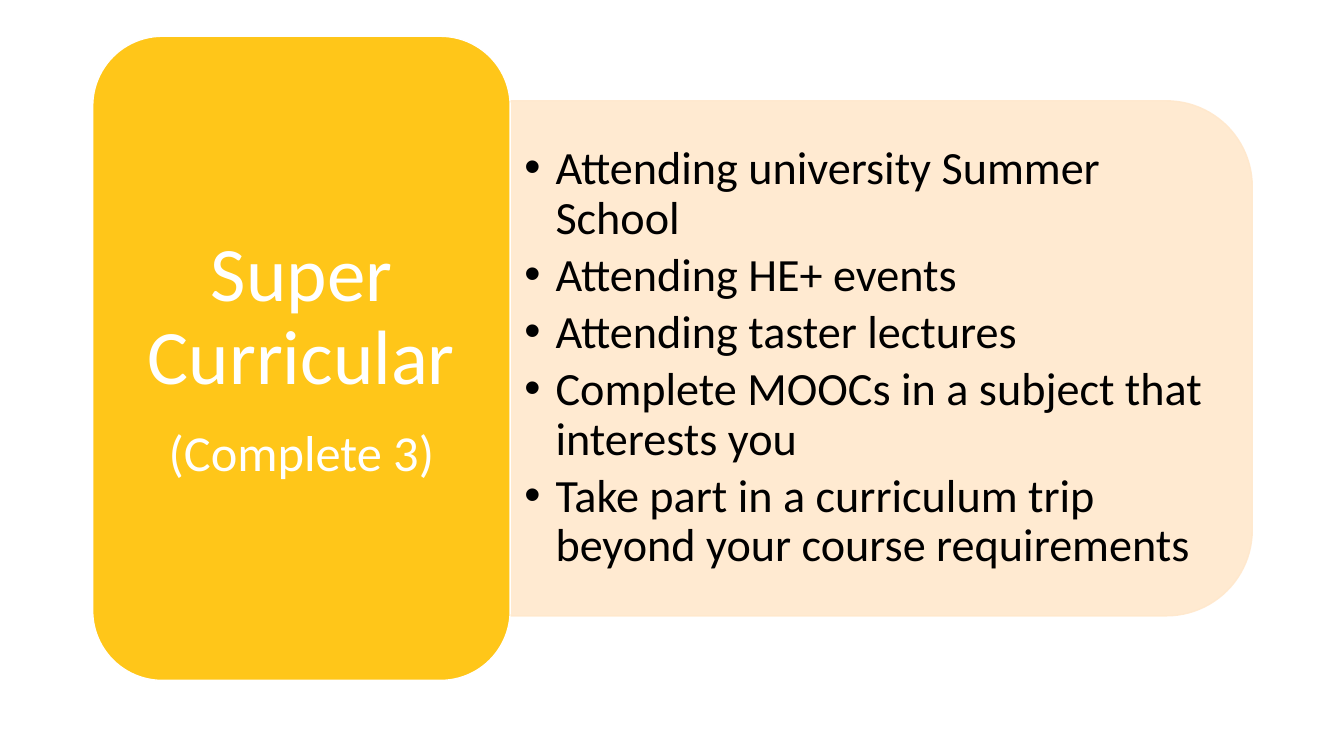
from dataclasses import dataclass
from lxml import etree
from pptx import Presentation
from pptx.dml.color import RGBColor
from pptx.enum.shapes import MSO_SHAPE
from pptx.enum.text import MSO_ANCHOR, MSO_AUTO_SIZE, PP_ALIGN
from pptx.oxml.ns import qn
from pptx.util import Inches, Pt

ROUND = MSO_SHAPE.ROUNDED_RECTANGLE
TAB = MSO_SHAPE.ROUND_2_SAME_RECTANGLE
MIDDLE = MSO_ANCHOR.MIDDLE
FIXED = MSO_AUTO_SIZE.NONE
LEFT, CENTER = PP_ALIGN.LEFT, PP_ALIGN.CENTER


@dataclass(frozen=True)
class Theme:
    font: str = "Calibri"
    gold: str = "FFC000"
    cream: str = "FFE8CC"
    white: str = "FFFFFF"
    black: str = "000000"
    head: int = 55
    sub: int = 36
    body: int = 33
    alpha: int = 90


THEME = Theme()

CARD = (0.92, 0.36, 4.14, 6.39)
PANEL = (5.06, 1.0, 7.36, 5.11)
HEAD = [("Super Curricular", THEME.head), ("(Complete 3)", THEME.sub)]
TASKS = [
    "Attending university Summer School",
    "Attending HE+ events",
    "Attending taster lectures",
    "Complete MOOCs in a subject that interests you",
    "Take part in a curriculum trip beyond your course requirements",
]


def apply(item, form):
    for name, value in form.items():
        setattr(item, name, value)


def place(item, box):
    names = ("left", "top", "width", "height")
    apply(item, dict(zip(names, map(Inches, box))))


def fade(fill):
    tint = fill._xPr.find(qn("a:solidFill"))[0]
    etree.SubElement(tint, qn("a:alpha"), val=str(THEME.alpha * 1000))


def add_form(slide, kind, box, color, edge):
    form = slide.shapes.add_shape(kind, *map(Inches, box))
    form.shadow.inherit = False
    for fill, tone in ((form.fill, color), (form.line.fill, edge)):
        fill.solid()
        fill.fore_color.rgb = RGBColor.from_string(tone)
    form.line.width = Pt(1)
    fade(form.fill)
    return form


def set_frame(frame, side, end):
    apply(frame, {
        "word_wrap": True, "auto_size": FIXED, "vertical_anchor": MIDDLE,
        "margin_left": Inches(side), "margin_right": Inches(side),
        "margin_top": Inches(end), "margin_bottom": Inches(end),
    })


def write(frame, lines, color, align, gap):
    for i, (text, size) in enumerate(lines):
        para = frame.add_paragraph() if i else frame.paragraphs[0]
        apply(para, {"alignment": align, "line_spacing": 0.9,
                     "space_after": Pt(gap)})
        run = para.add_run()
        run.text = text
        apply(run.font, {"name": THEME.font, "size": Pt(size)})
        run.font.color.rgb = RGBColor.from_string(color)


def add_dots(frame, indent):
    for para in frame.paragraphs:
        props = para._p.get_or_add_pPr()
        props.set("marL", str(Inches(indent)))
        props.set("indent", str(-Inches(indent)))
        etree.SubElement(props, qn("a:buFont"), typeface="Arial")
        etree.SubElement(props, qn("a:buChar"), char="•")


def add_panel(slide, box):
    x, y, w, h = box
    turn = (x + (w - h) / 2, y + (h - w) / 2, h, w)
    form = add_form(slide, TAB, turn, THEME.cream, THEME.cream)
    form.rotation = 90
    fade(form.line.fill)
    area = (x, y + 0.25, w - 0.25, h - 0.5)
    frame = slide.shapes.add_textbox(*map(Inches, area)).text_frame
    set_frame(frame, 0.14, 0.07)
    lines = [(task, THEME.body) for task in TASKS]
    write(frame, lines, THEME.black, LEFT, 5)
    add_dots(frame, 0.31)


def add_card(slide, box):
    add_form(slide, ROUND, box, THEME.gold, THEME.white)
    x, y, w, h = box
    title = slide.shapes.title
    place(title, (x + 0.2, y + 0.2, w - 0.4, h - 0.4))
    set_frame(title.text_frame, 0.23, 0.11)
    write(title.text_frame, HEAD, THEME.white, CENTER, 19)
    slide.shapes._spTree.append(title._element)


def main():
    deck = Presentation()
    apply(deck, {"slide_width": Inches(13.33), "slide_height": Inches(7.5)})
    slide = deck.slides.add_slide(deck.slide_layouts[5])
    add_panel(slide, PANEL)
    add_card(slide, CARD)
    deck.save("out.pptx")


if __name__ == "__main__":
    main()
